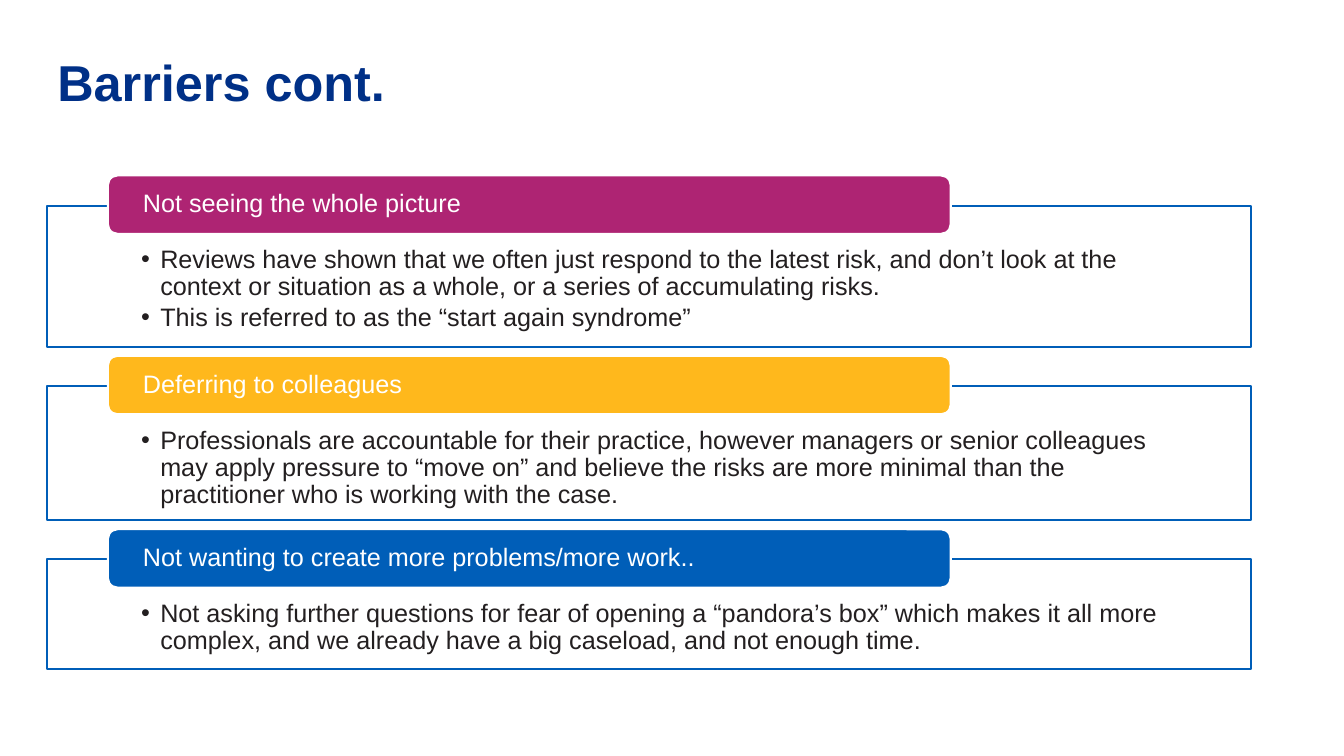
from lxml.etree import SubElement
from pptx import Presentation
from pptx.dml.color import RGBColor
from pptx.enum.shapes import MSO_SHAPE as Shape
from pptx.enum.text import MSO_ANCHOR as Anchor, PP_ALIGN as Align
from pptx.oxml.ns import qn
from pptx.util import Inches, Pt

NAVY = RGBColor(0x00, 0x30, 0x87)
BLUE = RGBColor(0x00, 0x5E, 0xB8)
PLUM = RGBColor(0xAE, 0x24, 0x73)
AMBER = RGBColor(0xFF, 0xB8, 0x1C)
INK = RGBColor(0x23, 0x1F, 0x20)
WHITE = RGBColor(0xFF, 0xFF, 0xFF)

LEFT = 0.47
FIRST_TOP = 2.04
PANEL_GAP = 0.39
TAB_RISE = 0.3

BARRIERS = [
    ("Not seeing the whole picture", PLUM, 1.4, [
        "Reviews have shown that we often just respond to the latest risk, and don’t look at the "
        "context or situation as a whole, or a series of accumulating risks.",
        "This is referred to as the “start again syndrome”",
    ]),
    ("Deferring to colleagues", AMBER, 1.33, [
        "Professionals are accountable for their practice, however managers or senior colleagues "
        "may apply pressure to “move on” and believe the risks are more minimal than the "
        "practitioner who is working with the case.",
    ]),
    ("Not wanting to create more problems/more work..", BLUE, 1.09, [
        "Not asking further questions for fear of opening a “pandora’s box” which makes it all more "
        "complex, and we already have a big caseload, and not enough time.",
    ]),
]


def set_frame(frame, anchor, side, top, bottom):
    """Set wrapping, anchoring and insets of a text frame."""
    frame.word_wrap = True
    frame.vertical_anchor = anchor
    frame.margin_left = frame.margin_right = Inches(side)
    frame.margin_top, frame.margin_bottom = Inches(top), Inches(bottom)


def style_para(para, size, color, bold=False):
    """Apply spacing and font to a paragraph."""
    para.alignment = Align.LEFT
    para.line_spacing = 0.9
    for span in para.runs:
        span.font.name = "Arial"
        span.font.size = Pt(size)
        span.font.bold = bold
        span.font.color.rgb = color


def add_bullet(para):
    """Give a paragraph a hanging round bullet."""
    properties = para._p.get_or_add_pPr()
    properties.set("marL", str(Inches(0.19)))
    properties.set("indent", str(-Inches(0.19)))
    SubElement(properties, qn("a:buFont"), typeface="Arial")
    SubElement(properties, qn("a:buChar"), char="•")


def add_block(page, kind, area, fill, line):
    """Add a filled, outlined shape without shadow."""
    block = page.shapes.add_shape(kind, *map(Inches, area))
    block.shadow.inherit = False
    block.fill.solid()
    block.fill.fore_color.rgb = fill
    block.line.color.rgb = line
    block.line.width = Pt(1.5)
    return block


def add_title(page, text):
    """Add the slide heading."""
    box = page.shapes.add_textbox(Inches(LEFT), Inches(0.53), Inches(9.33), Inches(1.1))
    set_frame(box.text_frame, Anchor.TOP, 0.1, 0.05, 0.05)
    box.text_frame.text = text
    style_para(box.text_frame.paragraphs[0], 36, NAVY, bold=True)


def add_panel(page, top, height, points):
    """Add an outlined panel with bulleted points."""
    panel = add_block(page, Shape.RECTANGLE, (LEFT, top, 11.94, height), WHITE, BLUE)
    set_frame(panel.text_frame, Anchor.TOP, 0.93, 0.41, 0.14)
    panel.text_frame.text = "\n".join(points)
    for para in panel.text_frame.paragraphs:
        add_bullet(para)
        style_para(para, 18, INK)
        para.space_after = Pt(2.7)


def add_tab(page, top, heading, color):
    """Add the coloured heading that overlaps a panel's top edge."""
    tab = add_block(page, Shape.ROUNDED_RECTANGLE, (1.07, top, 8.36, 0.58), color, WHITE)
    set_frame(tab.text_frame, Anchor.MIDDLE, 0.32, 0, 0)
    tab.text_frame.text = heading
    style_para(tab.text_frame.paragraphs[0], 18, WHITE)


def main():
    """Build and save the slide."""
    deck = Presentation()
    deck.slide_width, deck.slide_height = Inches(13.33), Inches(7.5)
    page = deck.slides.add_slide(deck.slide_layouts[6])
    add_title(page, "Barriers cont.")
    top = FIRST_TOP
    for heading, color, height, points in BARRIERS:
        add_panel(page, top, height, points)
        add_tab(page, top - TAB_RISE, heading, color)
        top += height + PANEL_GAP
    deck.save("out.pptx")


if __name__ == "__main__":
    main()
